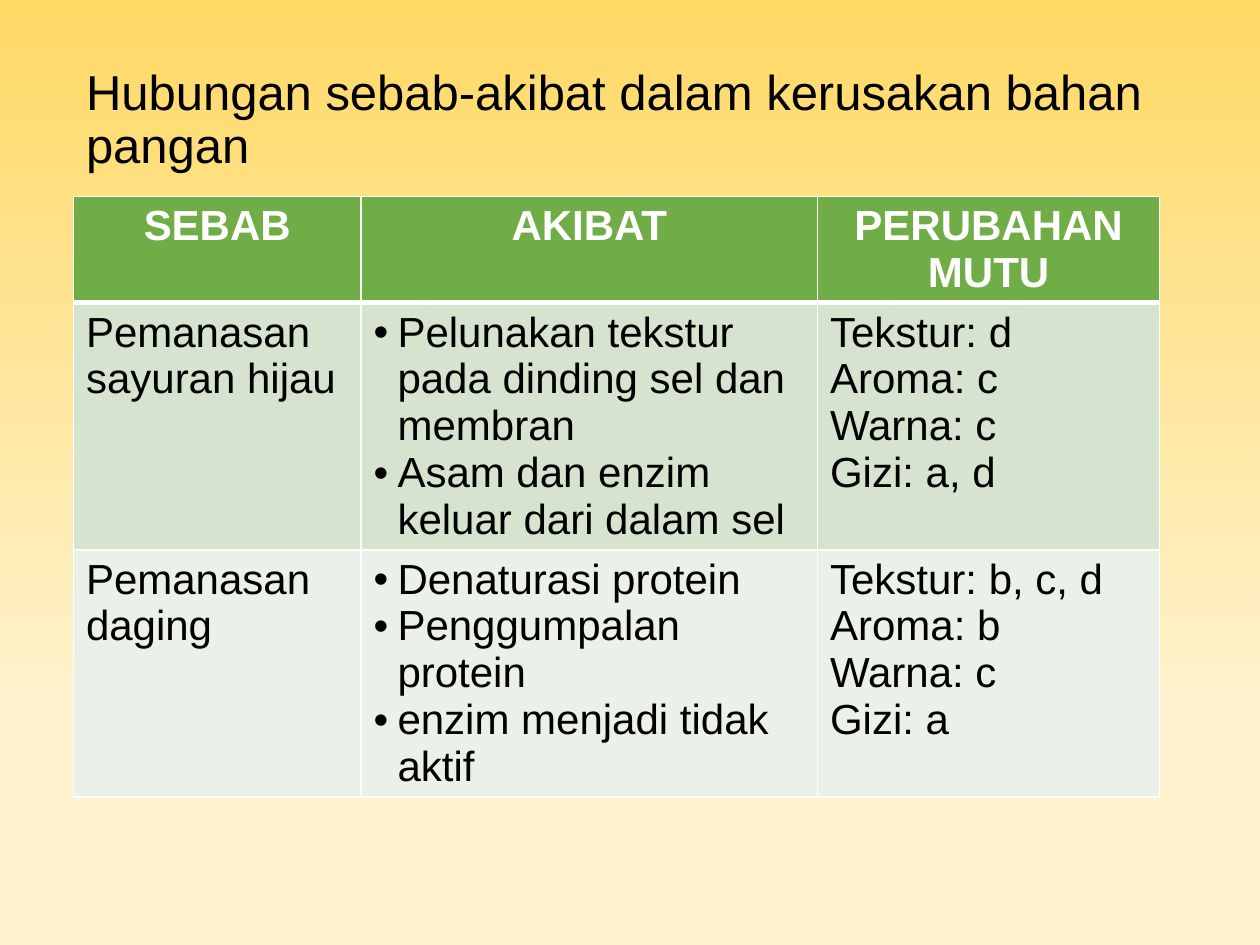
from lxml import etree
from pptx import Presentation
from pptx.dml.color import RGBColor
from pptx.enum import text as t
from pptx.oxml.ns import qn
from pptx.util import Cm, Pt

BLACK = RGBColor(0x00, 0x00, 0x00)
WHITE = RGBColor(0xFF, 0xFF, 0xFF)
GOLD = RGBColor(0xFF, 0xD9, 0x66)
CREAM = RGBColor(0xFF, 0xF2, 0xCC)
GREEN = RGBColor(0x70, 0xAD, 0x47)
ROW_FILLS = [GREEN, RGBColor(0xD5, 0xE3, 0xCF), RGBColor(0xEB, 0xF1, 0xE9)]

LEFT, WIDTH = Cm(1.48), Cm(21.9)
COLUMN_WIDTHS = [Cm(5.8), Cm(9.2), Cm(6.9)]
ROW_HEIGHTS = [Cm(2.13), Cm(4.98), Cm(4.98)]
BULLET_COLUMN = 1
ROWS = [
    [["SEBAB"], ["AKIBAT"], ["PERUBAHAN MUTU"]],
    [
        ["Pemanasan sayuran hijau"],
        ["Pelunakan tekstur pada dinding sel dan membran",
         "Asam dan enzim keluar dari dalam sel"],
        ["Tekstur: d", "Aroma: c", "Warna: c", "Gizi: a, d"],
    ],
    [
        ["Pemanasan daging"],
        ["Denaturasi protein", "Penggumpalan protein", "enzim menjadi tidak aktif"],
        ["Tekstur: b, c, d", "Aroma: b", "Warna: c", "Gizi: a"],
    ],
]


def add_bullet(para):
    properties = para._p.get_or_add_pPr()
    properties.set("marL", str(Cm(0.48)))
    properties.set("indent", str(-Cm(0.48)))
    font = etree.SubElement(properties, qn("a:buFont"))
    font.set("typeface", "Arial")
    etree.SubElement(properties, qn("a:buChar")).set("char", "•")


def write_text(frame, lines, size=24, color=BLACK, bold=False,
               align=t.PP_ALIGN.LEFT, bullets=False, spacing=None):
    """Fill a text frame with one paragraph per line."""
    for index, line in enumerate(lines):
        para = frame.add_paragraph() if index else frame.paragraphs[0]
        para.alignment = align
        if spacing:
            para.line_spacing = spacing
        if bullets:
            add_bullet(para)
        span = para.add_run()
        span.text = line
        span.font.name = "Arial"
        span.font.size = Pt(size)
        span.font.bold = bold
        span.font.color.rgb = color


def set_borders(cell, **widths):
    """Draw white borders; L, R, T and B give widths in points."""
    properties = cell._tc.get_or_add_tcPr()
    for side, width in widths.items():
        line = etree.SubElement(properties, qn(f"a:ln{side}"), w=str(Pt(width)))
        fill = etree.SubElement(line, qn("a:solidFill"))
        etree.SubElement(fill, qn("a:srgbClr")).set("val", str(WHITE))


def paint_background(slide):
    fill = slide.background.fill
    fill.gradient()
    fill.gradient_angle = 270
    for stop, position, color in zip(fill.gradient_stops, (0, 0.74), (GOLD, CREAM)):
        stop.position = position
        stop.color.rgb = color


def place_title(slide, title):
    box = slide.shapes.title
    box.left, box.top, box.width, box.height = LEFT, Cm(0.61), WIDTH, Cm(3.68)
    frame = box.text_frame
    frame.word_wrap = True
    frame.auto_size = t.MSO_AUTO_SIZE.NONE
    frame.vertical_anchor = t.MSO_ANCHOR.MIDDLE
    write_text(frame, [title], size=28, spacing=0.9)


def add_cause_table(slide):
    table = slide.shapes.add_table(
        len(ROWS), len(COLUMN_WIDTHS), LEFT, Cm(3.96), WIDTH, sum(ROW_HEIGHTS)).table
    for column, width in zip(table.columns, COLUMN_WIDTHS):
        column.width = width
    for row, height in zip(table.rows, ROW_HEIGHTS):
        row.height = height
    for r, contents in enumerate(ROWS):
        header = r == 0
        for c, lines in enumerate(contents):
            cell = table.cell(r, c)
            set_borders(cell, L=1, R=1, T=3 if r == 1 else 1, B=3 if header else 1)
            cell.fill.solid()
            cell.fill.fore_color.rgb = ROW_FILLS[r]
            write_text(cell.text_frame, lines, bold=header,
                       color=WHITE if header else BLACK,
                       align=t.PP_ALIGN.CENTER if header else t.PP_ALIGN.LEFT,
                       bullets=c == BULLET_COLUMN and not header)


def main():
    deck = Presentation()
    deck.slide_width, deck.slide_height = Cm(25.4), Cm(19.05)
    slide = deck.slides.add_slide(deck.slide_layouts[5])
    paint_background(slide)
    place_title(slide, "Hubungan sebab-akibat dalam kerusakan bahan pangan")
    add_cause_table(slide)
    deck.save("out.pptx")


if __name__ == "__main__":
    main()
